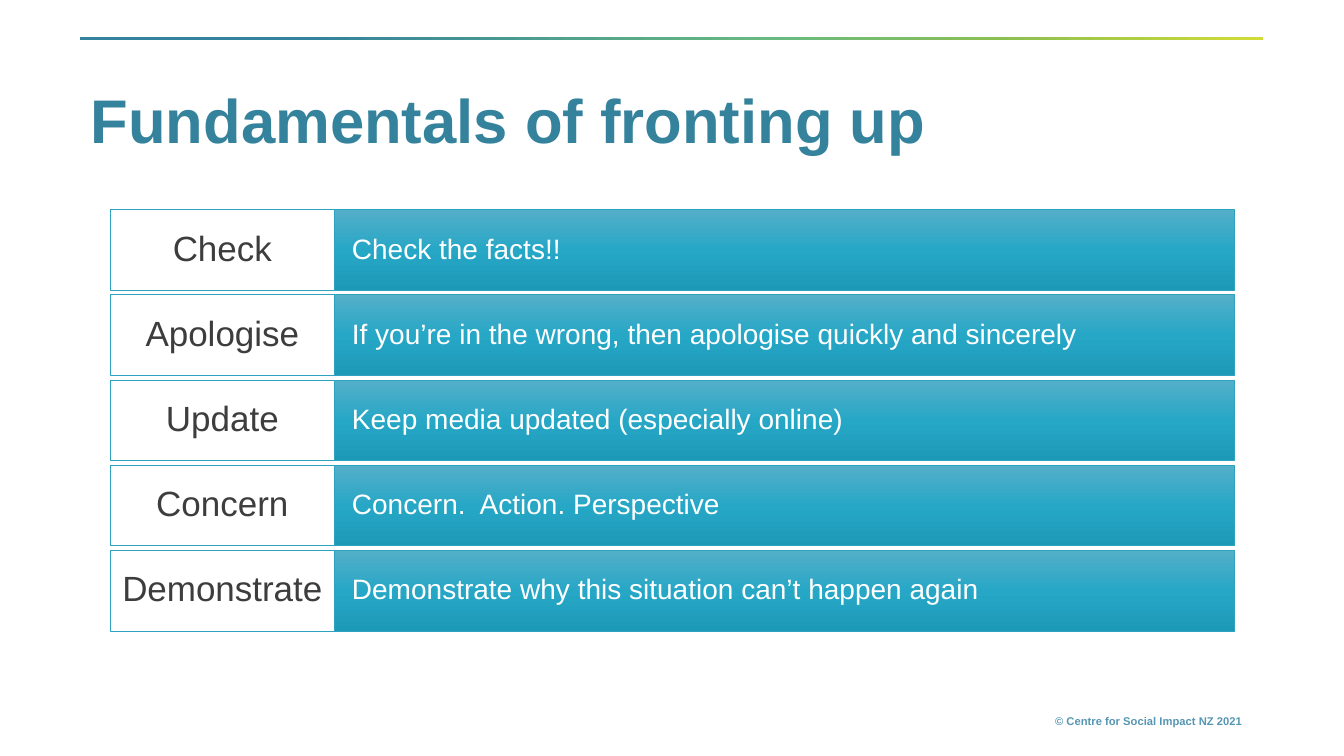
from lxml import etree
from pptx import Presentation
from pptx.dml.color import RGBColor
from pptx.enum.shapes import MSO_SHAPE
from pptx.enum.text import MSO_ANCHOR, MSO_AUTO_SIZE, PP_ALIGN
from pptx.oxml.ns import qn
from pptx.util import Inches, Pt

RECT = MSO_SHAPE.RECTANGLE
MIDDLE = MSO_ANCHOR.MIDDLE
NO_AUTOFIT = MSO_AUTO_SIZE.NONE
LEFT, CENTER, RIGHT = PP_ALIGN.LEFT, PP_ALIGN.CENTER, PP_ALIGN.RIGHT

FONT = "Arial"
TITLE_BLUE = RGBColor(0x35, 0x82, 0x9C)
FOOTER_BLUE = RGBColor(0x55, 0x96, 0xB2)
BORDER = RGBColor(0x2E, 0xA3, 0xBF)
DARK = RGBColor(0x3C, 0x3D, 0x3C)
WHITE = RGBColor(0xFF, 0xFF, 0xFF)

# Gradient stops: position in percent, colour
RULE_STOPS = [(20, RGBColor(0x35, 0x83, 0x9C)), (59, RGBColor(0x69, 0xBA, 0x80)),
              (78, RGBColor(0x8C, 0xBF, 0x52)), (100, RGBColor(0xD2, 0xDC, 0x36))]
BAR_STOPS = [(0, RGBColor(0x54, 0xAF, 0xC9)), (50, RGBColor(0x27, 0xA7, 0xC6)),
             (100, RGBColor(0x1C, 0x99, 0xB7))]

STEPS = [
    ("Check", "Check the facts!!"),
    ("Apologise", "If you’re in the wrong, then apologise quickly and sincerely"),
    ("Update", "Keep media updated (especially online)"),
    ("Concern", "Concern.  Action. Perspective"),
    ("Demonstrate", "Demonstrate why this situation can’t happen again"),
]
ROW_TOP, ROW_PITCH, ROW_HEIGHT = 2.08, 0.845, 0.8
LABEL_LEFT, LABEL_WIDTH, BAR_WIDTH = 1.09, 2.23, 8.92


def set_gradient(s, stops, angle):
    s.fill.gradient()
    s.fill.gradient_angle = angle
    gs_list = s._element.spPr.find(qn("a:gradFill")).find(qn("a:gsLst"))
    for gs in list(gs_list):
        gs_list.remove(gs)
    for position, color in stops:
        gs = etree.SubElement(gs_list, qn("a:gs"), pos=str(position * 1000))
        etree.SubElement(gs, qn("a:srgbClr"), val=str(color))


def set_text(s, text, size, color, align=LEFT, bold=False, spacing=0.9):
    tf = s.text_frame
    tf.text = text
    tf.word_wrap = True
    tf.auto_size = NO_AUTOFIT
    tf.vertical_anchor = MIDDLE
    p = tf.paragraphs[0]
    p.alignment = align
    p.line_spacing = spacing
    font = p.runs[0].font
    font.name, font.size, font.bold = FONT, Pt(size), bold
    font.color.rgb = color


def add_rect(slide, left, top, width, height):
    s = slide.shapes.add_shape(RECT, Inches(left), Inches(top),
                               Inches(width), Inches(height))
    s.shadow.inherit = False
    return s


def add_cell(slide, left, top, width, margin):
    s = add_rect(slide, left, top, width, ROW_HEIGHT)
    s.line.color.rgb = BORDER
    s.line.width = Pt(0.5)
    s.text_frame.margin_left = s.text_frame.margin_right = Inches(margin)
    return s


def add_step(slide, top, label, advice):
    bar = add_cell(slide, LABEL_LEFT + LABEL_WIDTH, top, BAR_WIDTH, 0.17)
    set_gradient(bar, BAR_STOPS, 270)
    set_text(bar, advice, 20, WHITE)

    box = add_cell(slide, LABEL_LEFT, top, LABEL_WIDTH, 0.1)
    box.fill.solid()
    box.fill.fore_color.rgb = WHITE
    set_text(box, label, 25, DARK, CENTER)


def add_title(slide, text):
    title = slide.shapes.title
    title.left, title.top = Inches(0.8), Inches(0.77)
    title.width, title.height = Inches(11.73), Inches(0.92)
    set_text(title, text, 44, TITLE_BLUE, bold=True)


def add_footer(slide, text):
    footer = slide.shapes.add_textbox(Inches(8.89), Inches(7.03),
                                      Inches(3.53), Inches(0.24))
    set_text(footer, text, 8, FOOTER_BLUE, RIGHT, bold=True, spacing=1.0)


def main():
    prs = Presentation()
    prs.slide_width, prs.slide_height = Inches(13.33), Inches(7.5)
    slide = prs.slides.add_slide(prs.slide_layouts[5])

    # Footer and top rule
    add_footer(slide, "© Centre for Social Impact NZ 2021")
    rule = add_rect(slide, 0.79, 0.37, 11.74, 0.03)
    set_gradient(rule, RULE_STOPS, 0)
    rule.line.fill.background()

    # Title and rows of steps
    add_title(slide, "Fundamentals of fronting up")
    for i, (label, advice) in enumerate(STEPS):
        add_step(slide, ROW_TOP + i * ROW_PITCH, label, advice)

    prs.save("out.pptx")


if __name__ == "__main__":
    main()
